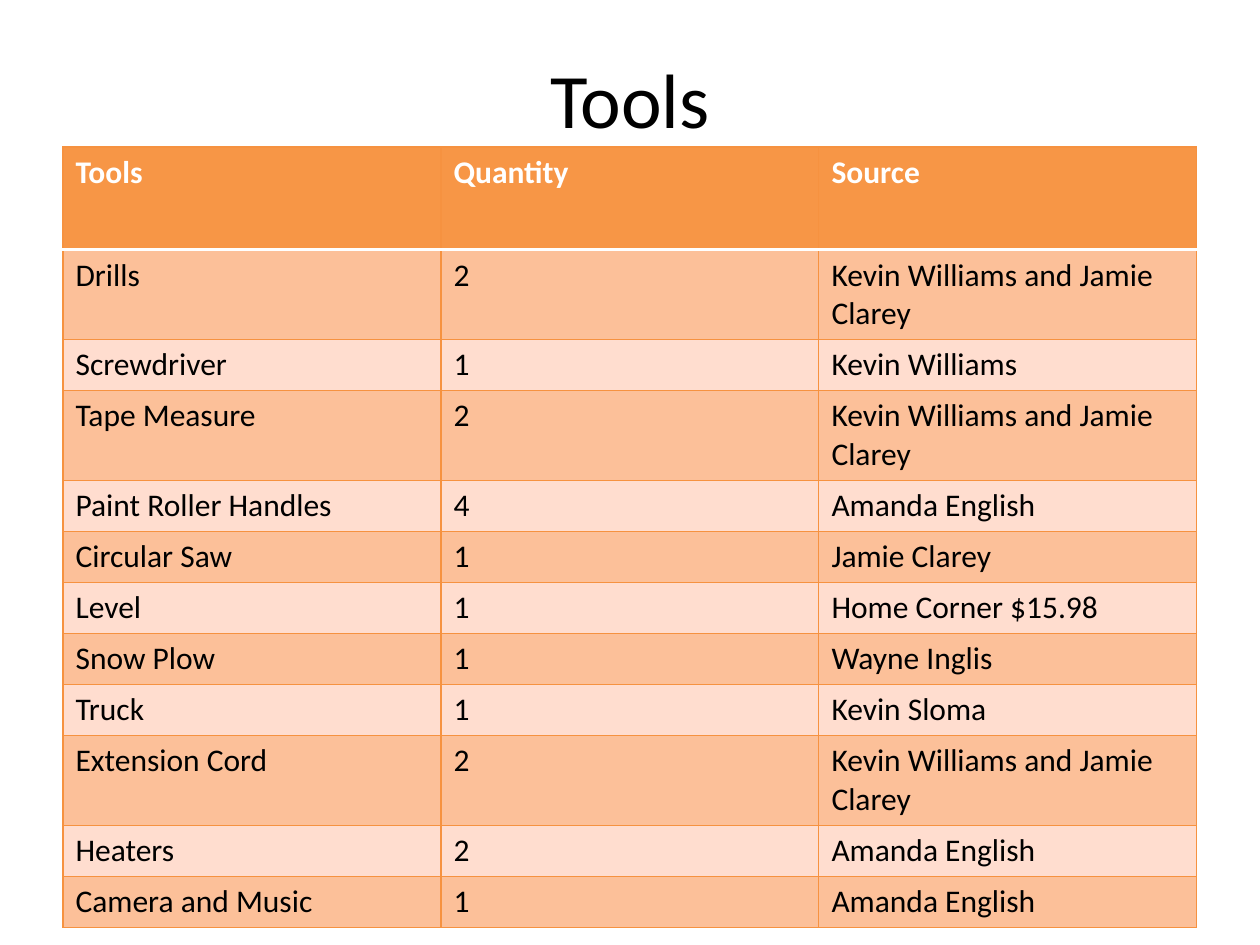
from lxml import etree
from pptx import Presentation
from pptx.dml.color import RGBColor
from pptx.enum.text import MSO_ANCHOR, PP_ALIGN
from pptx.oxml.ns import qn
from pptx.util import Emu, Pt

CENTER = PP_ALIGN.CENTER
MIDDLE = MSO_ANCHOR.MIDDLE
TITLE_ONLY = 5
EMU_PER_PX = 914400 // 126
COLORS = {
    "header": "F79646",
    "dark_band": "FCC099",
    "light_band": "FFDDCF",
    "border": "F69240",
    "white": "FFFFFF",
    "black": "000000",
}
HEADINGS = ("Tools", "Quantity", "Source")
TOOLS = [
    ("Drills", "2", "Kevin Williams and Jamie Clarey"),
    ("Screwdriver", "1", "Kevin Williams"),
    ("Tape Measure", "2", "Kevin Williams and Jamie Clarey"),
    ("Paint Roller Handles", "4", "Amanda English"),
    ("Circular Saw", "1", "Jamie Clarey"),
    ("Level", "1", "Home Corner $15.98"),
    ("Snow Plow", "1", "Wayne Inglis"),
    ("Truck", "1", "Kevin Sloma"),
    ("Extension Cord", "2", "Kevin Williams and Jamie Clarey"),
    ("Heaters", "2", "Amanda English"),
    ("Camera and Music", "1", "Amanda English"),
]


def px(length):
    return Emu(length * EMU_PER_PX)


class ToolSlide:
    """Holds the style and the slide, and adds each kind of element."""

    def __init__(self, slide, font="Calibri"):
        self.slide = slide
        self.font = font

    def text(self, frame, words, size, color, bold=False):
        frame.text = words
        run = frame.paragraphs[0].runs[0]
        styles = {"name": self.font, "size": Pt(size), "bold": bold}
        for attribute, value in styles.items():
            setattr(run.font, attribute, value)
        run.font.color.rgb = RGBColor.from_string(COLORS[color])

    def title(self, words, left, top, width, height):
        heading = self.slide.shapes.title
        place = {"left": left, "top": top, "width": width, "height": height}
        for attribute, value in place.items():
            setattr(heading, attribute, px(value))
        self.text(heading.text_frame, words, 44, "black")
        heading.text_frame.vertical_anchor = MIDDLE
        heading.text_frame.paragraphs[0].alignment = CENTER

    def border(self, cell, side, color, points):
        properties = cell._tc.get_or_add_tcPr()
        line = etree.SubElement(properties, qn(f"a:ln{side}"), w=str(Pt(points)))
        fill = etree.SubElement(line, qn("a:solidFill"))
        etree.SubElement(fill, qn("a:srgbClr"), val=COLORS[color])

    def cell(self, cell, words, row):
        is_header = row == 0
        rule = ("border", 0.75)
        divider = ("white", 2)
        edges = {
            "L": rule,
            "R": rule,
            "T": divider if row == 1 else rule,
            "B": divider if is_header else rule,
        }
        for side, (color, points) in edges.items():
            self.border(cell, side, color, points)
        band = "header" if is_header else ("light_band", "dark_band")[row % 2]
        cell.fill.solid()
        cell.fill.fore_color.rgb = RGBColor.from_string(COLORS[band])
        self.text(cell.text_frame, words, 18, "white" if is_header else "black", is_header)

    def table(self, rows, left, top, column_width, header_height, row_height):
        heights = [header_height] + [row_height] * (len(rows) - 1)
        width = column_width * len(rows[0])
        table = self.slide.shapes.add_table(
            len(rows), len(rows[0]), px(left), px(top), px(width), px(sum(heights))
        ).table
        for column in table.columns:
            column.width = px(column_width)
        for index, (values, height) in enumerate(zip(rows, heights)):
            table.rows[index].height = px(height)
            for column, words in enumerate(values):
                self.cell(table.cell(index, column), words, index)


def main():
    deck = Presentation()
    deck.slide_width, deck.slide_height = px(1260), px(945)
    page = ToolSlide(deck.slides.add_slide(deck.slide_layouts[TITLE_ONLY]))
    page.title("Tools", 63, 38, 1134, 120)
    page.table([HEADINGS, *TOOLS], 63, 147, 378, 103, 51)
    deck.save("out.pptx")


if __name__ == "__main__":
    main()
